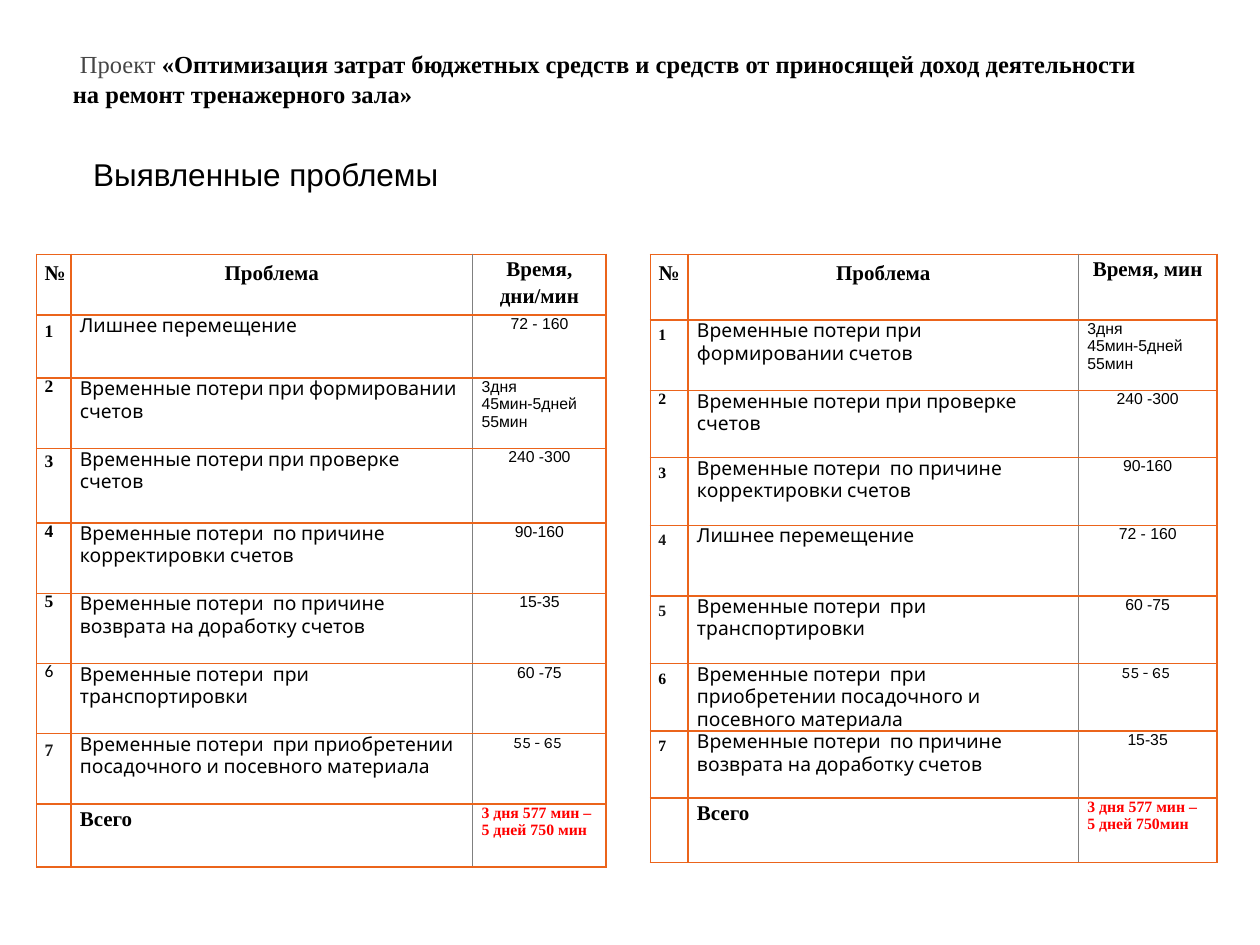
from dataclasses import dataclass

from lxml.etree import SubElement
from pptx import Presentation
from pptx.dml.color import RGBColor
from pptx.enum.text import MSO_AUTO_SIZE, PP_ALIGN
from pptx.oxml.ns import qn
from pptx.util import Cm, Pt


@dataclass(frozen=True)
class Theme:
    black: str = "000000"
    dark: str = "191919"
    muted: str = "464646"
    white: str = "FFFFFF"
    red: str = "FF0000"
    border: str = "EB641B"
    divider: str = "808080"
    serif: str = "Times New Roman"
    sans: str = "Arial"
    body: str = "Karla"
    heading: int = 18
    lead: int = 16
    title: int = 14
    header: int = 12
    problem: int = 11
    number: int = 10
    time: int = 9


T = Theme()
HEADER_INSETS = (0.16, 0.08)
BODY_INSETS = (0.18, 0)
NO_INSETS = (0, 0)
CENTER = PP_ALIGN.CENTER
LOOSE = 1.15
TIGHT = Pt(8)

MOVING = ("Лишнее перемещение", "72 - 160", {})
BILLING = ("Временные потери при формировании счетов", "3дня 45мин-5дней 55мин",
           {"align": None})
CHECKING = ("Временные потери при проверке счетов", "240 -300", {})
CORRECTING = ("Временные потери  по причине корректировки счетов", "90-160", {})
RETURNING = ("Временные потери  по причине возврата на доработку счетов", "15-35", {})
TRANSPORT = ("Временные потери  при транспортировки", "60 -75", {})
PLANTING = ("Временные потери  при приобретении посадочного и посевного материала",
            "55 - 65 ", {"font": T.body})

BY_PROCESS = [
    (MOVING, {}),
    (BILLING, {"spacing": TIGHT}),
    (CHECKING, {"spacing": None}),
    (CORRECTING, {"spacing": TIGHT}),
    (RETURNING, {"spacing": TIGHT}),
    (TRANSPORT, {"spacing": TIGHT, "font": "Calibri", "bold": False}),
    (PLANTING, {"color": T.dark}),
]
BY_TIME = [
    (BILLING, {}),
    (CHECKING, {"spacing": TIGHT}),
    (CORRECTING, {}),
    (MOVING, {"color": T.dark}),
    (TRANSPORT, {"color": T.dark}),
    (PLANTING, {}),
    (RETURNING, {}),
]


def write(p, text, *, size, font=T.serif, color=T.black, bold=False,
          align=None, spacing=None):
    r = p.add_run()
    r.text = text
    r.font.size = Pt(size)
    r.font.name = font
    r.font.bold = bold
    r.font.color.rgb = RGBColor.from_string(color)
    if align is not None:
        p.alignment = align
    if spacing is not None:
        p.line_spacing = spacing


def add_text_box(s, left, top, width, height, runs, wrap=True):
    tf = s.shapes.add_textbox(Cm(left), Cm(top), Cm(width), Cm(height)).text_frame
    tf.word_wrap = wrap
    tf.auto_size = MSO_AUTO_SIZE.SHAPE_TO_FIT_TEXT
    for text, style in runs:
        write(tf.paragraphs[0], text, **style)


def set_borders(cell, **colors):
    tc_pr = cell._tc.get_or_add_tcPr()
    for side in ("L", "R", "T", "B"):
        ln = SubElement(tc_pr, qn(f"a:ln{side}"), w=str(Pt(1)))
        fill = SubElement(ln, qn("a:solidFill"))
        SubElement(fill, qn("a:srgbClr"), val=colors.get(side, T.border))


def fill_cell(cell, text, insets, **style):
    cell.margin_left = cell.margin_right = Cm(insets[0])
    cell.margin_top = cell.margin_bottom = Cm(insets[1])
    write(cell.text_frame.paragraphs[0], text, **style)


def add_problem_table(s, left, top, widths, heights, problems,
                      time_header, total, number_size):
    frame = s.shapes.add_table(len(heights), len(widths), Cm(left), Cm(top),
                               Cm(sum(widths)), Cm(sum(heights)))
    table = frame.table
    table.first_row = table.horz_banding = False
    for column, width in zip(table.columns, widths):
        column.width = Cm(width)
    for row, height in zip(table.rows, heights):
        row.height = Cm(height)
        for cell, colors in zip(row.cells, ({}, {"R": T.divider}, {"L": T.divider})):
            set_borders(cell, **colors)
            cell.fill.solid()
            cell.fill.fore_color.rgb = RGBColor.from_string(T.white)

    header = {"size": T.header, "bold": True, "spacing": LOOSE}
    for col, (text, insets) in enumerate((("№", HEADER_INSETS),
                                          ("Проблема", HEADER_INSETS),
                                          (time_header, NO_INSETS))):
        fill_cell(table.cell(0, col), text, insets, align=CENTER, **header)

    number = {"size": number_size, "bold": True, "spacing": LOOSE}
    time = {"size": T.time, "font": T.sans, "align": CENTER}
    for i, ((name, duration, time_style), number_style) in enumerate(problems, 1):
        fill_cell(table.cell(i, 0), str(i), HEADER_INSETS, **(number | number_style))
        fill_cell(table.cell(i, 1), name, BODY_INSETS, size=T.problem, font=T.body)
        fill_cell(table.cell(i, 2), duration, BODY_INSETS, **(time | time_style))

    last = len(heights) - 1
    fill_cell(table.cell(last, 1), "Всего", BODY_INSETS, **header)
    fill_cell(table.cell(last, 2), total, BODY_INSETS,
              size=T.time, color=T.red, bold=True)


def main():
    prs = Presentation()
    prs.slide_width, prs.slide_height = Cm(25.4), Cm(19.05)
    s = prs.slides.add_slide(prs.slide_layouts[6])

    add_problem_table(
        s, 0.74, 5.13, (0.69, 8.1, 2.69),
        (1.22, 1.27, 1.42, 1.5, 1.42, 1.42, 1.41, 1.42, 1.27),
        BY_PROCESS, "Время, дни/мин", "3 дня 577 мин – 5 дней 750 мин", T.number)
    add_problem_table(
        s, 13.11, 5.13, (0.76, 7.87, 2.79),
        (1.32, 1.42, 1.35, 1.37, 1.42, 1.37, 1.35, 1.35, 1.3),
        BY_TIME, "Время, мин", "3 дня 577 мин – 5 дней 750мин", T.time)

    add_text_box(s, 3 - 1.37, 3, 7.54, 1.02, [
        ("Выявленные проблемы", {"size": T.heading, "font": T.sans}),
    ], wrap=False)
    add_text_box(s, 1.22, 0.79, 22, 1.55, [
        (" ", {"size": T.lead, "color": T.muted}),
        ("Проект ", {"size": T.title, "color": T.muted}),
        ("«Оптимизация затрат бюджетных средств и средств от приносящей доход "
         "деятельности на ремонт тренажерного зала»", {"size": T.title, "bold": True}),
    ])

    prs.save("out.pptx")


if __name__ == "__main__":
    main()
